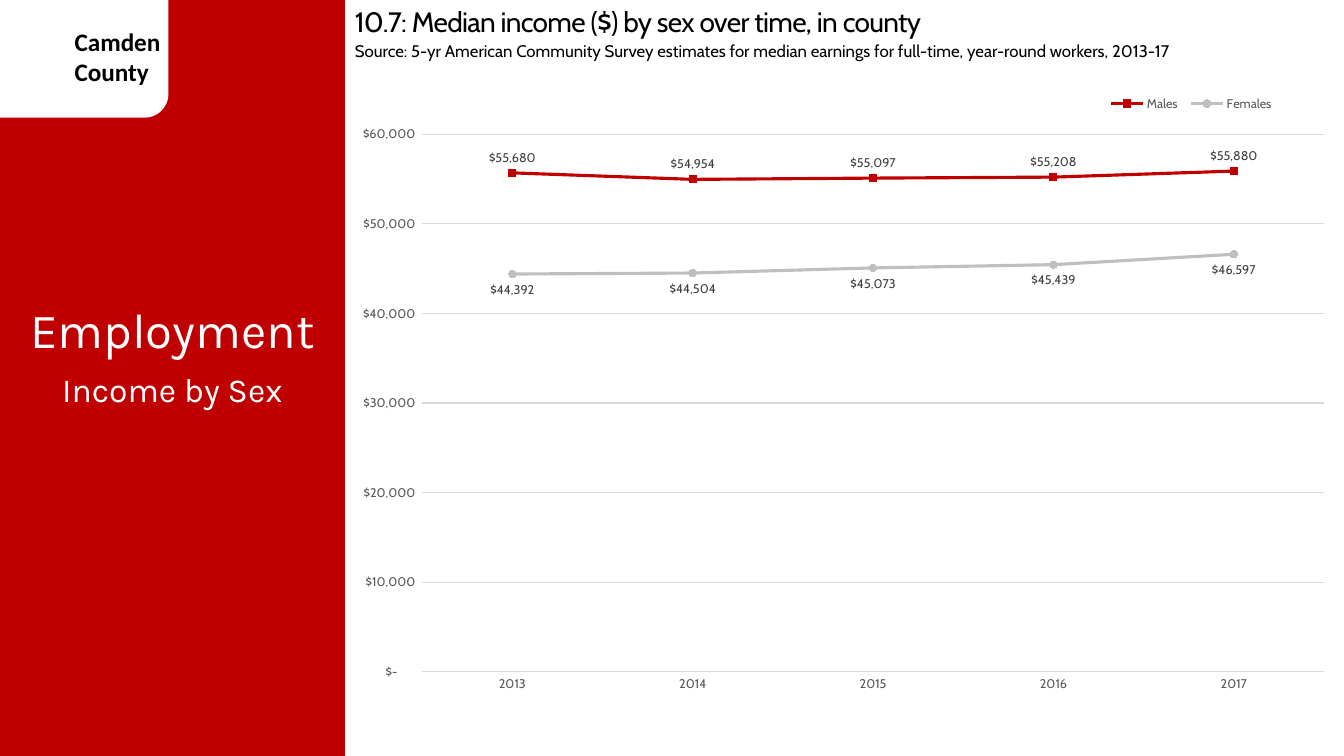
from dataclasses import dataclass

import lxml.etree
import pptx
import pptx.chart.data
import pptx.dml.color
import pptx.enum.chart
import pptx.enum.shapes
import pptx.enum.text
import pptx.oxml
import pptx.oxml.ns
import pptx.util


@dataclass(frozen=True)
class Theme:
    red: str = "C00000"
    white: str = "FFFFFF"
    black: str = "000000"
    silver: str = "BFBFBF"
    grid: str = "D9D9D9"
    axis_text: str = "595959"
    label_text: str = "404040"
    badge_font: str = "Calibri"
    panel_font: str = "Karla"
    body_font: str = "Cabin"
    badge_size: int = 18
    topic_size: int = 35
    subtopic_size: int = 24
    heading_size: int = 20
    source_size: int = 12
    chart_size: int = 9


@dataclass(frozen=True)
class Box:
    left: float
    top: float
    width: float
    height: float

    def share(self, left, top, width, height):
        return Box(self.left + left * self.width, self.top + top * self.height,
                   width * self.width, height * self.height)

    def lengths(self):
        return [pptx.util.Inches(value) for value in (self.left, self.top, self.width, self.height)]


THEME = Theme()
SLIDE = Box(0, 0, 13.33, 7.5)
PANEL_SHARE = 0.2566
DOLLARS = '_("$"* #,##0_);_("$"* \\(#,##0\\);_("$"* "-"??_);_(@_)'
YEARS = ["2013", "2014", "2015", "2016", "2017"]
MALES = [55680, 54954, 55097, 55208, 55880]
FEMALES = [44392, 44504, 45073, 45439, 46597]


def rgb(color):
    return pptx.dml.color.RGBColor.from_string(color)


def style_font(font, name, size, color, bold=False):
    font.name = name
    font.size = pptx.util.Pt(size)
    font.color.rgb = rgb(color)
    font.bold = bold


def style_line(line, color, width):
    line.color.rgb = rgb(color)
    line.width = pptx.util.Pt(width)


def add_block(slide, kind, box, color):
    shape = slide.shapes.add_shape(kind, *box.lengths())
    shape.shadow.inherit = False
    shape.fill.solid()
    shape.fill.fore_color.rgb = rgb(color)
    shape.line.fill.background()


def add_text(slide, box, lines, font, size, color, bold=False, centered=False, spacing=None):
    frame = slide.shapes.add_textbox(*box.lengths()).text_frame
    frame.word_wrap = True
    frame.auto_size = pptx.enum.text.MSO_AUTO_SIZE.SHAPE_TO_FIT_TEXT
    for index, line in enumerate(lines):
        paragraph = frame.add_paragraph() if index else frame.paragraphs[0]
        if centered:
            paragraph.alignment = pptx.enum.text.PP_ALIGN.CENTER
        run = paragraph.add_run()
        run.text = line
        style_font(run.font, font, size, color, bold)
        if spacing is not None:
            run._r.get_or_add_rPr().set("spc", str(round(spacing * 100)))


def add_badge(slide, box):
    add_block(slide, pptx.enum.shapes.MSO_SHAPE.ROUNDED_RECTANGLE, box, THEME.white)
    add_text(slide, box.share(0.485, 0.324, 0.585, 0.5), ["Camden", "County"],
             THEME.badge_font, THEME.badge_size, THEME.black, bold=True)


def add_topic_panel(slide, box):
    add_block(slide, pptx.enum.shapes.MSO_SHAPE.RECTANGLE, box, THEME.red)
    add_badge(slide, box.share(-0.0965, -0.0333, 0.585, 0.189))
    add_text(slide, box.share(0, 0.389, 1, 0.092), ["Employment"],
             THEME.panel_font, THEME.topic_size, THEME.white, centered=True)
    add_text(slide, box.share(0, 0.481, 1, 0.067), ["Income by Sex"],
             THEME.panel_font, THEME.subtopic_size, THEME.white, centered=True)


def add_layout(parent, left, top, width, height, inner=False):
    layout = parent.find(pptx.oxml.ns.qn("c:layout"))
    if layout is None:
        layout = pptx.oxml.parse_xml(f'<c:layout {pptx.oxml.ns.nsdecls("c")}/>')
        before = parent.find(pptx.oxml.ns.qn("c:legendPos"))
        if before is None:
            parent.insert(0, layout)
        else:
            before.addnext(layout)
    manual = lxml.etree.SubElement(layout, pptx.oxml.ns.qn("c:manualLayout"))
    settings = [("layoutTarget", "inner")] if inner else []
    settings += [("xMode", "edge"), ("yMode", "edge"),
                 ("x", left), ("y", top), ("w", width), ("h", height)]
    for name, value in settings:
        lxml.etree.SubElement(manual, pptx.oxml.ns.qn(f"c:{name}")).set("val", str(value))


def style_axis(axis):
    axis.major_tick_mark = pptx.enum.chart.XL_TICK_MARK.NONE
    axis.minor_tick_mark = pptx.enum.chart.XL_TICK_MARK.NONE
    style_font(axis.tick_labels.font, THEME.body_font, THEME.chart_size, THEME.axis_text)


def style_series(series, color, marker, position):
    series.smooth = False
    style_line(series.format.line, color, 2.25)
    series.marker.style = marker
    series.marker.size = 5
    series.marker.format.fill.solid()
    series.marker.format.fill.fore_color.rgb = rgb(color)
    style_line(series.marker.format.line, color, 0.75)
    labels = series.data_labels
    labels.show_value = True
    labels.position = position
    labels.number_format = DOLLARS
    labels.number_format_is_linked = False
    style_font(labels.font, THEME.body_font, THEME.chart_size, THEME.label_text)


def add_income_chart(slide, box):
    chart_enums = pptx.enum.chart
    data = pptx.chart.data.CategoryChartData(number_format=DOLLARS)
    data.categories = YEARS
    data.add_series("Males", MALES)
    data.add_series("Females", FEMALES)
    chart = slide.shapes.add_chart(chart_enums.XL_CHART_TYPE.LINE_MARKERS, *box.lengths(), data).chart
    chart.has_title = False
    style_font(chart.font, THEME.body_font, THEME.chart_size, THEME.axis_text)
    chart.plots[0].vary_by_categories = False
    style_axis(chart.category_axis)
    style_line(chart.category_axis.format.line, THEME.grid, 0.75)
    values = chart.value_axis
    style_axis(values)
    values.minimum_scale, values.maximum_scale, values.major_unit = 0, 60000, 10000
    values.tick_labels.number_format = DOLLARS
    values.tick_labels.number_format_is_linked = False
    values.format.line.fill.background()
    style_line(values.major_gridlines.format.line, THEME.grid, 0.75)
    markers, positions = chart_enums.XL_MARKER_STYLE, chart_enums.XL_LABEL_POSITION
    males, females = chart.plots[0].series
    style_series(males, THEME.red, markers.SQUARE, positions.ABOVE)
    style_series(females, THEME.silver, markers.CIRCLE, positions.BELOW)
    chart.has_legend = True
    chart.legend.position = chart_enums.XL_LEGEND_POSITION.BOTTOM
    chart.legend.include_in_layout = False
    style_font(chart.legend.font, THEME.body_font, THEME.chart_size, THEME.axis_text)
    add_layout(chart.legend._element, 0.76, 0, 0.18, 0.04)
    add_layout(chart._chartSpace.chart.plotArea, 0.074, 0.067, 0.91, 0.828, inner=True)


def add_content(slide, box):
    add_text(slide, box.share(0, 0, 0.995, 0.059), ["10.7: Median income ($) by sex over time, in county"],
             THEME.body_font, THEME.heading_size, THEME.black, spacing=-0.5)
    add_text(slide, box.share(0, 0.048, 0.927, 0.04),
             ["Source: 5-yr American Community Survey estimates for median earnings "
              "for full-time, year-round workers, 2013-17"],
             THEME.body_font, THEME.source_size, THEME.black)
    add_income_chart(slide, box.share(0.004, 0.12, 0.992, 0.859))


def main():
    presentation = pptx.Presentation()
    presentation.slide_width = pptx.util.Inches(SLIDE.width)
    presentation.slide_height = pptx.util.Inches(SLIDE.height)
    slide = presentation.slides.add_slide(presentation.slide_layouts[6])
    add_topic_panel(slide, SLIDE.share(0, 0, PANEL_SHARE, 1))
    add_content(slide, SLIDE.share(PANEL_SHARE, 0, 1 - PANEL_SHARE, 1))
    presentation.save("out.pptx")


if __name__ == "__main__":
    main()
